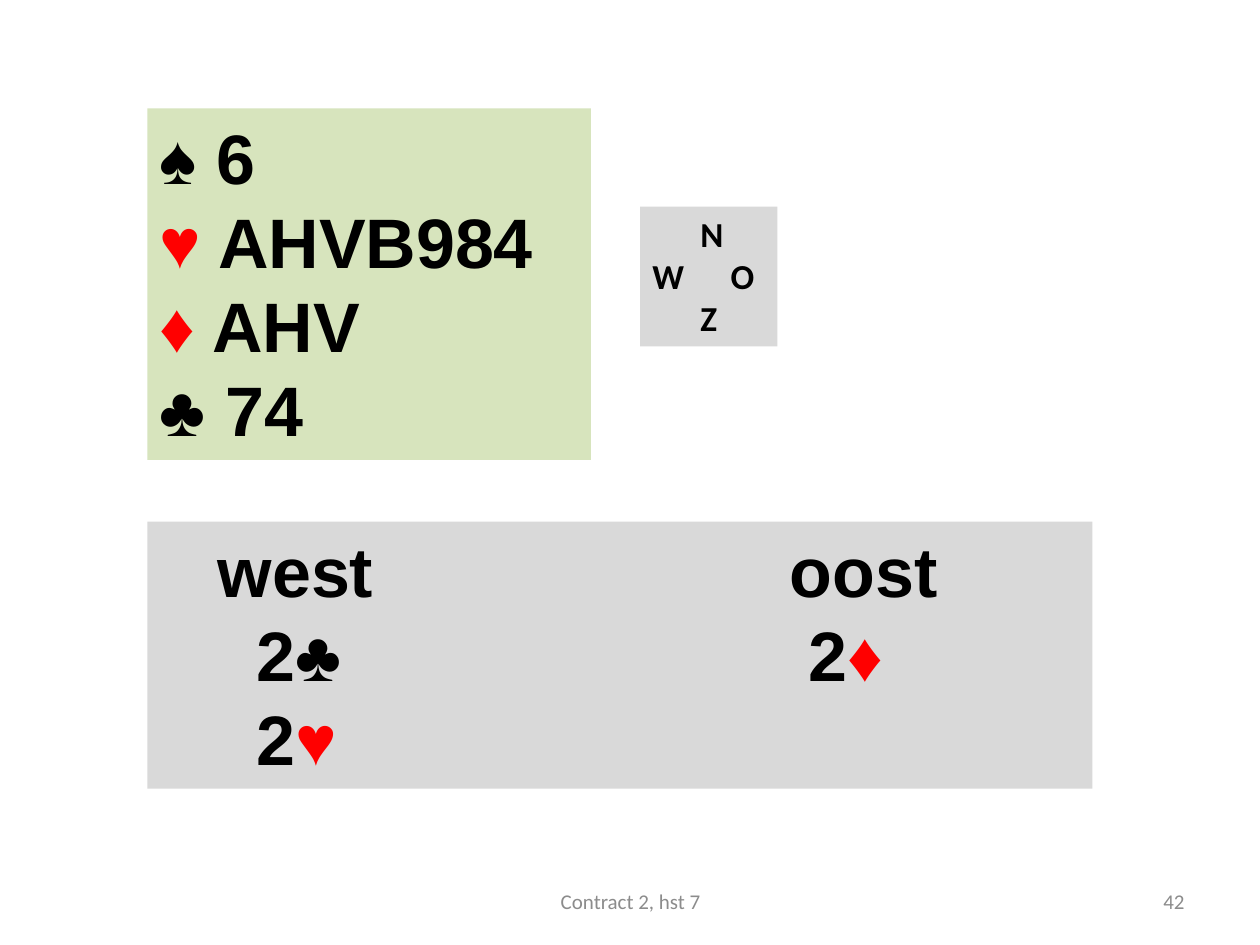
"""Build a bridge bidding slide with a hand, a compass and the auction."""
from dataclasses import dataclass
from itertools import groupby

from lxml.etree import SubElement
from pptx import Presentation
from pptx.dml.color import RGBColor as Rgb
from pptx.enum.text import MSO_ANCHOR as Anchor, MSO_AUTO_SIZE as AutoSize, PP_ALIGN as Align
from pptx.oxml.ns import qn
from pptx.slide import Slide
from pptx.util import Inches, Pt

COLORS = {
    "hand": "D7E4BD",
    "panel": "D9D9D9",
    "ink": "000000",
    "red_suit": "FF0000",
    "footer": "8C8C8C",
}
RED_SUITS = "♥♦"


@dataclass(frozen=True)
class Panel:
    """A filled block of lines, each with its own tab stops in inches."""
    left: float
    top: float
    width: float
    height: float
    fill: str
    font: str
    size: int
    lines: tuple[tuple[str, tuple[float, ...]], ...]


@dataclass(frozen=True)
class Footer:
    """A small line of text at the foot of the slide."""
    left: float
    width: float
    text: str
    align: Align


PANELS = (
    Panel(1.17, 0.86, 3.52, 2.79, "hand", "Arial", 40,
          (("♠ 6", ()), ("♥ AHVB984", ()), ("♦ AHV", ()), ("♣ 74", ()))),
    Panel(5.08, 1.64, 1.09, 1.11, "panel", "Calibri", 20,
          (("\tN", (0.38,)), ("W\tO", (0.62,)), ("\tZ", (0.38,)))),
    Panel(1.17, 4.14, 7.5, 2.12, "panel", "Arial", 40,
          (("\twest\toost", (0.46, 5)), ("\t2♣\t2♦", (0.77, 5.15)), ("\t2♥", (0.77,)))),
)
FOOTERS = (
    Footer(7.17, 2.33, "42", Align.RIGHT),
    Footer(3.42, 3.17, "Contract 2, hst 7", Align.CENTER),
)


def write_line(paragraph, text: str, *, font: str, size: int, color: str = "ink",
               bold: bool = False, align: Align = Align.LEFT,
               tabs: tuple[float, ...] = ()) -> None:
    """Write one line, with hearts and diamonds in red."""
    paragraph.alignment = align
    if tabs:
        tab_list = SubElement(paragraph._p.get_or_add_pPr(), qn("a:tabLst"))
        for stop in tabs:
            SubElement(tab_list, qn("a:tab"), pos=str(Inches(stop)), algn="l")
    for is_red, letters in groupby(text, key=lambda letter: letter in RED_SUITS):
        run = paragraph.add_run()
        run.text = "".join(letters)
        run.font.name = font
        run.font.size = Pt(size)
        run.font.bold = bold
        run.font.color.rgb = Rgb.from_string(COLORS["red_suit" if is_red else color])


def draw_panel(slide: Slide, panel: Panel) -> None:
    """Draw a filled block with its lines."""
    block = slide.shapes.add_textbox(Inches(panel.left), Inches(panel.top),
                                     Inches(panel.width), Inches(panel.height))
    block.fill.solid()
    block.fill.fore_color.rgb = Rgb.from_string(COLORS[panel.fill])
    frame = block.text_frame
    frame.word_wrap = True
    frame.auto_size = AutoSize.SHAPE_TO_FIT_TEXT
    for index, (text, tabs) in enumerate(panel.lines):
        paragraph = frame.add_paragraph() if index else frame.paragraphs[0]
        write_line(paragraph, text, font=panel.font, size=panel.size, bold=True, tabs=tabs)


def draw_footer(slide: Slide, footer: Footer) -> None:
    """Draw one footer text."""
    frame = slide.shapes.add_textbox(Inches(footer.left), Inches(6.95),
                                     Inches(footer.width), Inches(0.4)).text_frame
    frame.word_wrap = True
    frame.vertical_anchor = Anchor.MIDDLE
    write_line(frame.paragraphs[0], footer.text, font="Calibri", size=12,
               color="footer", align=footer.align)


def main() -> None:
    """Build and save the slide."""
    deck = Presentation()
    deck.slide_width, deck.slide_height = Inches(10), Inches(7.5)
    slide = deck.slides.add_slide(deck.slide_layouts[6])
    for panel in PANELS:
        draw_panel(slide, panel)
    for footer in FOOTERS:
        draw_footer(slide, footer)
    deck.save("out.pptx")


if __name__ == "__main__":
    main()
